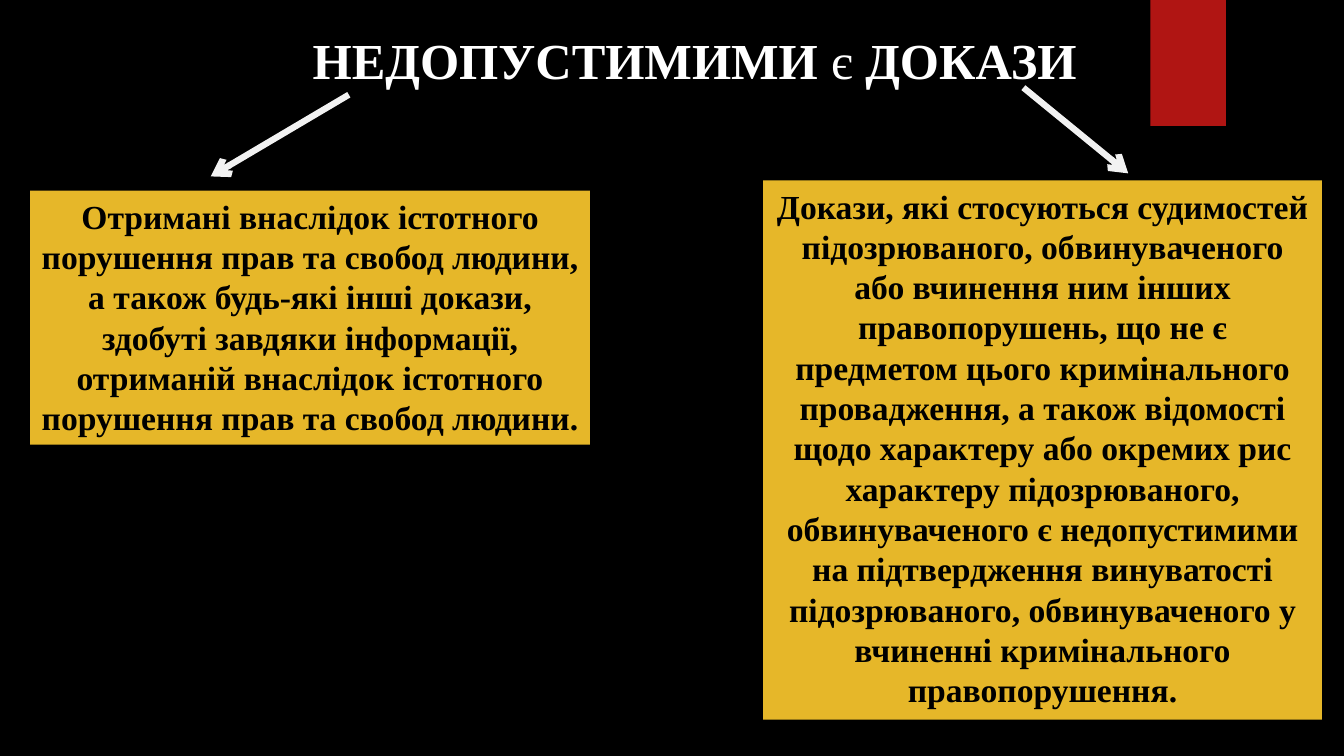
from dataclasses import dataclass

from lxml import etree
from pptx import Presentation
from pptx.dml.color import RGBColor
from pptx.enum.shapes import MSO_CONNECTOR as Connector, MSO_SHAPE as Shape
from pptx.enum.text import MSO_ANCHOR as Anchor, MSO_AUTO_SIZE as AutoSize, PP_ALIGN as Align
from pptx.oxml.ns import qn
from pptx.util import Inches, Pt


@dataclass(frozen=True)
class Theme:
    font: str = "Times New Roman"
    background: str = "000000"
    accent: str = "B01513"
    panel: str = "E6B729"
    arrow: str = "F2F2F2"
    title_text: str = "FFFFFF"
    panel_text: str = "000000"
    title_size: int = 36
    panel_size: int = 24
    arrow_width: float = 4.5


class SlideBuilder:
    def __init__(self, slide, theme):
        self.slide = slide
        self.theme = theme
        fill = slide.background.fill
        fill.solid()
        fill.fore_color.rgb = RGBColor.from_string(theme.background)

    def format_text(self, text_frame, size, color):
        text_frame.word_wrap = True
        text_frame.auto_size = AutoSize.SHAPE_TO_FIT_TEXT
        text_frame.vertical_anchor = Anchor.TOP
        paragraph = text_frame.paragraphs[0]
        paragraph.alignment = Align.CENTER
        paragraph.line_spacing = 1.0
        paragraph.space_before = Pt(0)
        for run in paragraph.runs:
            run.font.name = self.theme.font
            run.font.size = Pt(size)
            run.font.color.rgb = RGBColor.from_string(color)

    def title(self, parts, left, top, width, height):
        title = self.slide.shapes.title
        title.left, title.top = Inches(left), Inches(top)
        title.width, title.height = Inches(width), Inches(height)
        paragraph = title.text_frame.paragraphs[0]
        for text, bold in parts:
            run = paragraph.add_run()
            run.text = text
            run.font.bold = bold
        self.format_text(title.text_frame, self.theme.title_size, self.theme.title_text)

    def rectangle(self, color, left, top, width, height):
        shape = self.slide.shapes.add_shape(
            Shape.RECTANGLE, Inches(left), Inches(top), Inches(width), Inches(height))
        shape.shadow.inherit = False
        shape.fill.solid()
        shape.fill.fore_color.rgb = RGBColor.from_string(color)
        shape.line.fill.background()
        return shape

    def panel(self, text, left, top, width, height):
        shape = self.rectangle(self.theme.panel, left, top, width, height)
        shape.text_frame.text = text
        shape.text_frame.paragraphs[0].runs[0].font.bold = True
        self.format_text(shape.text_frame, self.theme.panel_size, self.theme.panel_text)

    def arrow(self, start, end):
        points = [Inches(value) for value in (*start, *end)]
        connector = self.slide.shapes.add_connector(Connector.STRAIGHT, *points)
        connector.line.color.rgb = RGBColor.from_string(self.theme.arrow)
        connector.line.width = Pt(self.theme.arrow_width)
        etree.SubElement(connector.line._get_or_add_ln(), qn("a:tailEnd"), type="arrow")
        etree.SubElement(connector._element.spPr, qn("a:effectLst"))


def main():
    presentation = Presentation()
    presentation.slide_width, presentation.slide_height = Inches(13.33), Inches(7.5)
    title_only = presentation.slide_layouts[5]
    theme = Theme()
    builder = SlideBuilder(presentation.slides.add_slide(title_only), theme)

    # Corner accent and title
    builder.rectangle(theme.accent, 11.41, 0, 0.75, 1.25)
    builder.title([("НЕДОПУСТИМИМИ", True), (" є ", False), ("ДОКАЗИ", True)],
                  2.79, 0.24, 8.2, 0.71)

    # Arrows from the title to the two kinds of evidence
    builder.arrow((3.46, 0.94), (2.09, 1.75))
    builder.arrow((10.15, 0.87), (11.19, 1.72))

    # Kinds of inadmissible evidence
    builder.panel(
        "Отримані внаслідок істотного порушення прав та свобод людини, а також "
        "будь-які інші докази, здобуті завдяки інформації, отриманій внаслідок "
        "істотного порушення прав та свобод людини.",
        0.3, 1.89, 5.55, 2.52)
    builder.panel(
        "Докази, які стосуються судимостей підозрюваного, обвинуваченого або "
        "вчинення ним інших правопорушень, що не є предметом цього кримінального "
        "провадження, а також відомості щодо характеру або окремих рис характеру "
        "підозрюваного, обвинуваченого є недопустимими на підтвердження винуватості "
        "підозрюваного, обвинуваченого у вчиненні кримінального правопорушення.",
        7.57, 1.79, 5.54, 5.35)

    presentation.save("out.pptx")


if __name__ == "__main__":
    main()
